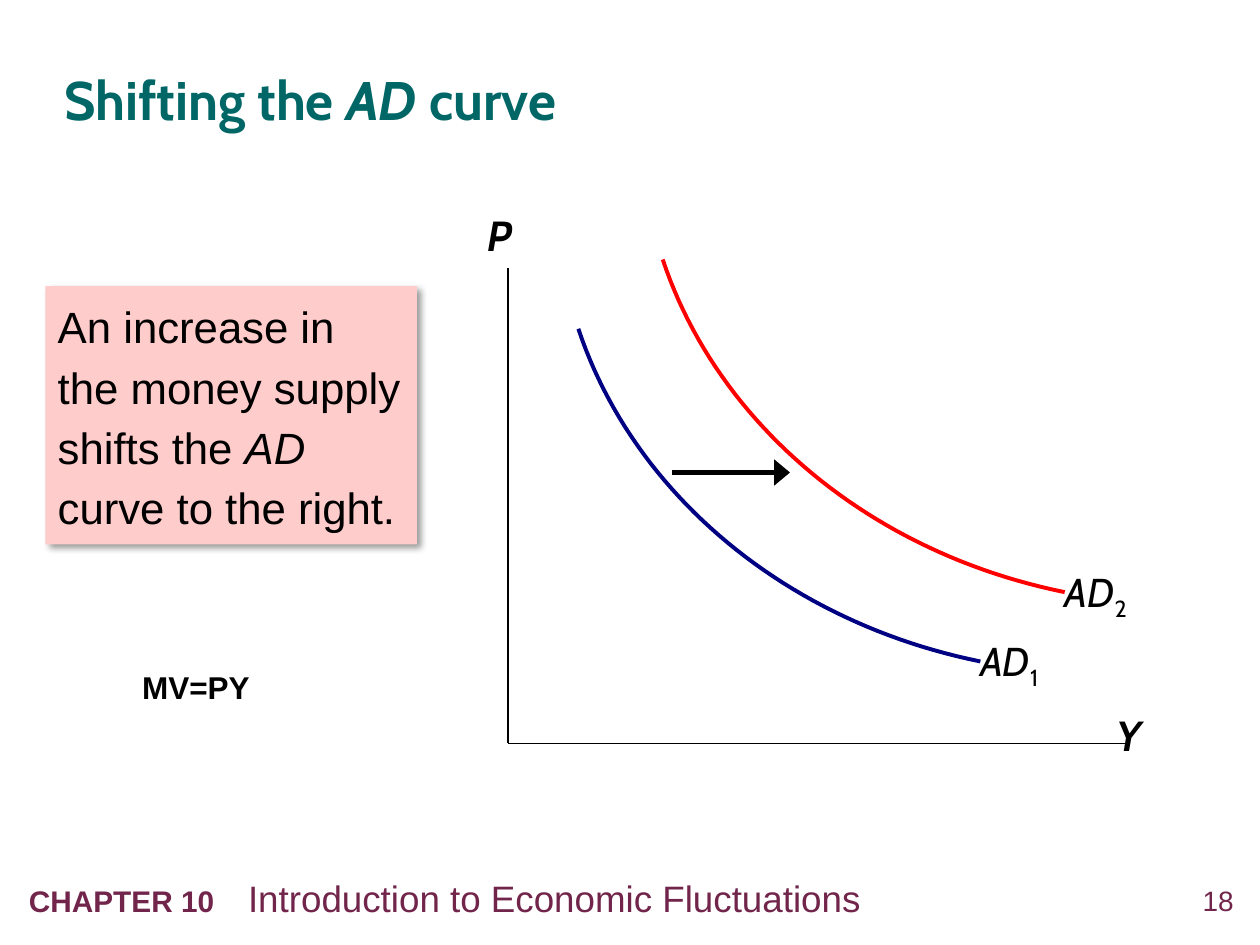
from lxml import etree
from pptx import Presentation
from pptx.dml.color import RGBColor
from pptx.enum.shapes import MSO_CONNECTOR, MSO_SHAPE
from pptx.enum.text import MSO_ANCHOR, PP_ALIGN
from pptx.oxml.ns import qn
from pptx.util import Emu, Pt

PX = 9144  # EMU per px, 100 px to the inch
LEFT, CENTER, RIGHT = PP_ALIGN.LEFT, PP_ALIGN.CENTER, PP_ALIGN.RIGHT
TOP, MIDDLE = MSO_ANCHOR.TOP, MSO_ANCHOR.MIDDLE
RECT, STRAIGHT = MSO_SHAPE.RECTANGLE, MSO_CONNECTOR.STRAIGHT
COLORS = {
    "ink": "000000",
    "title": "006666",
    "footer": "71254B",
    "callout": "FFCCCC",
    "ad1": "000082",
    "ad2": "FF0000",
}
BODY, HEAD = "Arial", "Cabin"


def px(n):
    return Emu(round(n * PX))


def rgb(name):
    return RGBColor.from_string(COLORS[name])


def sub(parent, tag, **attrs):
    return etree.SubElement(parent, qn(tag), attrs)


def write(tf, runs, size, font=BODY, color="ink", bold=False, italic=False,
          align=LEFT, anchor=TOP, inset=(10, 5), spacing=None, tab=None):
    """Fill a frame with one paragraph; runs are (text, overrides) pairs."""
    tf.word_wrap = True
    tf.vertical_anchor = anchor
    tf.margin_left = tf.margin_right = px(inset[0])
    tf.margin_top = tf.margin_bottom = px(inset[1])
    p = tf.paragraphs[0]
    p.alignment = align
    if spacing:
        p.line_spacing = spacing
    if tab:
        tabs = sub(p._p.get_or_add_pPr(), "a:tabLst")
        sub(tabs, "a:tab", pos=str(px(tab)), algn="l")
    for text, own in runs:
        r = p.add_run()
        r.text = text
        f = r.font
        f.name = font
        f.size = Pt(own.get("size", size))
        f.bold = own.get("bold", bold)
        f.italic = own.get("italic", italic)
        f.color.rgb = rgb(color)
        if "baseline" in own:
            r._r.get_or_add_rPr().set("baseline", str(own["baseline"]))


class Deck:
    def __init__(self, width, height):
        self.prs = Presentation()
        self.prs.slide_width, self.prs.slide_height = px(width), px(height)
        self.s = self.prs.slides.add_slide(self.prs.slide_layouts[6])

    def text(self, box, runs, size, **style):
        sp = self.s.shapes.add_textbox(*map(px, box))
        write(sp.text_frame, runs, size, **style)

    def callout(self, box, runs, size, **style):
        """Filled box with a soft drop shadow."""
        sp = self.s.shapes.add_shape(RECT, *map(px, box))
        sp.shadow.inherit = False
        sp.fill.solid()
        sp.fill.fore_color.rgb = rgb("callout")
        sp.line.fill.background()
        effects = sp._element.spPr.find(qn("a:effectLst"))
        shadow = sub(effects, "a:outerShdw", blurRad=str(Pt(4)), dist=str(Pt(3)),
                     dir="2700000", algn="tl", rotWithShape="0")
        sub(sub(shadow, "a:srgbClr", val=COLORS["ink"]), "a:alpha", val="40000")
        write(sp.text_frame, runs, size, **style)

    def line(self, start, end, width=1, arrow=False):
        sp = self.s.shapes.add_connector(STRAIGHT, *map(px, start + end))
        sp.line.color.rgb = rgb("ink")
        sp.line.width = Pt(width)
        if arrow:
            sub(sp.line._get_or_add_ln(), "a:tailEnd", type="triangle", w="lg", len="med")
        sub(sp._element.spPr, "a:effectLst")

    def curve(self, control, color, steps=48):
        """Draw a cubic Bezier through its four control points."""
        points = []
        for i in range(steps + 1):
            t = i / steps
            weights = ((1 - t) ** 3, 3 * t * (1 - t) ** 2, 3 * t * t * (1 - t), t ** 3)
            points.append(tuple(px(sum(w * c for w, c in zip(weights, axis)))
                                for axis in zip(*control)))
        builder = self.s.shapes.build_freeform(*points[0])
        builder.add_line_segments(points[1:], close=False)
        sp = builder.convert_to_shape()
        sp.shadow.inherit = False
        sp.fill.background()
        sp.line.color.rgb = rgb(color)
        sp.line.width = Pt(2.25)


def main():
    deck = Deck(1000, 750)
    upright, slanted = {"italic": False}, {"italic": True}

    deck.text((924, 701, 55, 32), [("18", {})], 16, color="footer",
              align=RIGHT, inset=(0, 0))
    deck.text((13, 690, 818, 45),
              [("CHAPTER 10\t", {"bold": True}),
               ("Introduction to Economic Fluctuations", {"size": 21})],
              17, color="footer", tab=174)
    deck.text((51, 26, 902, 103),
              [("Shifting the ", {}), ("AD", slanted), (" curve", {})],
              31, font=HEAD, color="title", bold=True, anchor=MIDDLE,
              inset=(0, 0), spacing=1.05)
    deck.callout((36, 227, 295, 205),
                 [("An increase in the money supply shifts the ", {}),
                  ("AD", slanted), (" curve to the right.", {})],
                 25, spacing=1.15)

    origin = (403, 590)
    deck.line((403, 213), origin)
    deck.line(origin, (894, 590))
    for name, box in (("Y", (854, 558, 84, 50)), ("P", (367, 161, 60, 50))):
        deck.text(box, [(name, {})], 24, font=HEAD, bold=True, italic=True, align=CENTER)

    ad_curve = ((778, 525), (625, 494), (503, 393), (459, 261))
    for number, color, dx, dy in (("1", "ad1", 0, 0), ("2", "ad2", 67, -55)):
        deck.curve([(x + dx, y + dy) for x, y in ad_curve], color)
        deck.text((768 + dx, 500 + dy, 75, 48),
                  [("AD", {}), (number, {**upright, "baseline": -25000})],
                  23, font=HEAD, italic=True)
    deck.line((533, 375), (627, 375), width=3, arrow=True)

    deck.text((103, 525, 128, 40), [("MV=PY", {})], 18, bold=True)
    deck.prs.save("out.pptx")


if __name__ == "__main__":
    main()
